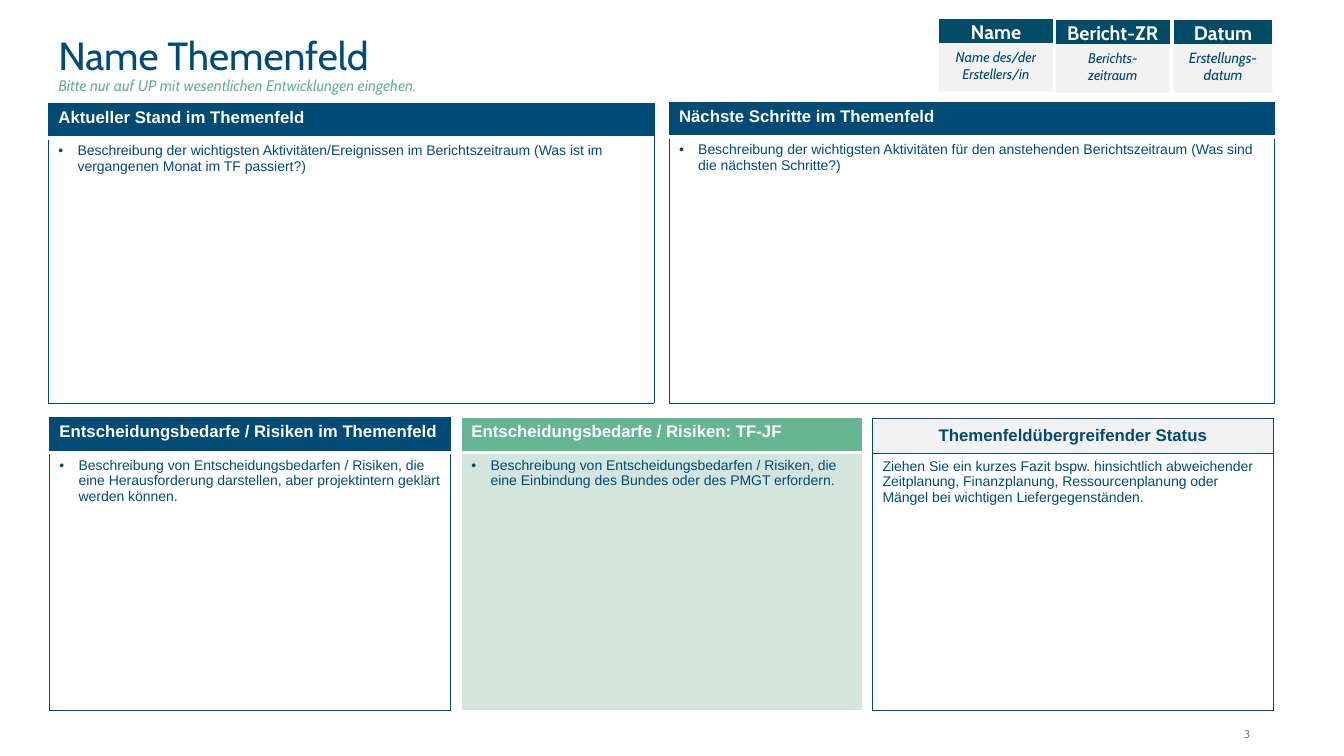
import pptx
import pptx.dml.color
import pptx.enum.shapes
import pptx.enum.text
import pptx.oxml
import pptx.oxml.ns
import pptx.util

PX = 9144
ALIGN = pptx.enum.text.PP_ALIGN
ANCHOR = pptx.enum.text.MSO_ANCHOR
SHAPE = pptx.enum.shapes.MSO_SHAPE
COLORS = {
    "navy": "004B76",
    "petrol": "004B65",
    "green": "66B692",
    "mint": "D3E5DC",
    "light": "F2F2F2",
    "white": "FFFFFF",
    "gray": "808080",
}
NAVY_LINE = ("navy", 0.25)
WHITE_LINE = ("white", 1)
WHITE_GAP = ("white", 3)


def px(*lengths):
    return [pptx.util.Emu(length * PX) for length in lengths]


def rgb(color):
    return pptx.dml.color.RGBColor.from_string(COLORS[color])


def set_margins(target, left, top, right, bottom):
    target.margin_left, target.margin_top, target.margin_right, target.margin_bottom = px(
        left, top, right, bottom)


def write(paragraph, text, size, color, font="Cabin", bold=False, italic=False, align=ALIGN.LEFT):
    paragraph.text = text
    paragraph.alignment = align
    paragraph.font.name = font
    paragraph.font.size = pptx.util.Pt(size)
    paragraph.font.bold = bold
    paragraph.font.italic = italic
    paragraph.font.color.rgb = rgb(color)


def add_bullet(paragraph):
    properties = paragraph._p.get_or_add_pPr()
    properties.set("marL", str(19 * PX))
    properties.set("indent", str(-19 * PX))
    namespace = pptx.oxml.ns.nsdecls("a")
    properties.append(pptx.oxml.parse_xml(f'<a:buFont {namespace} typeface="Arial"/>'))
    properties.append(pptx.oxml.parse_xml(f'<a:buChar {namespace} char="•"/>'))


def add_text_box(slide, box, anchor=ANCHOR.TOP):
    frame = slide.shapes.add_textbox(*px(*box)).text_frame
    frame.word_wrap = True
    frame.vertical_anchor = anchor
    return frame


def add_title(slide):
    frame = add_text_box(slide, (48, 31, 818, 71))
    set_margins(frame, 10, 5, 10, 5)
    write(frame.paragraphs[0], "Name Themenfeld", 28, "navy")
    write(frame.add_paragraph(), "Bitte nur auf UP mit wesentlichen Entwicklungen eingehen.",
          11, "green", italic=True)
    for paragraph in frame.paragraphs:
        paragraph.line_spacing = 0.9


def add_page_number(slide, number):
    frame = add_text_box(slide, (1194, 713, 47, 22), ANCHOR.BOTTOM)
    set_margins(frame, 0, 0, 0, 0)
    write(frame.paragraphs[0], number, 8, "gray", align=ALIGN.RIGHT)


def add_label(slide, kind, box, fill, margins, text, size, color, **style):
    shape = slide.shapes.add_shape(kind, *px(*box))
    shape.shadow.inherit = False
    shape.fill.solid()
    shape.fill.fore_color.rgb = rgb(fill)
    shape.line.fill.background()
    frame = shape.text_frame
    frame.word_wrap = True
    frame.vertical_anchor = ANCHOR.MIDDLE
    set_margins(frame, *margins)
    write(frame.paragraphs[0], text, size, color, align=ALIGN.CENTER, **style)


def add_info_card(slide, left, top, width, heading, hint, hint_size):
    add_label(slide, SHAPE.RECTANGLE, (left, top, width, 72), "light", (10, 24, 10, 5),
              hint, hint_size, "navy", italic=True)
    add_label(slide, SHAPE.FLOWCHART_PROCESS, (left, top, width, 24), "petrol", (0, 0, 0, 0),
              heading, 14, "white", bold=True)


def format_cell(cell, fill, borders):
    properties = cell._tc.get_or_add_tcPr()
    for side, (color, width) in zip("LRTB", borders):
        properties.append(pptx.oxml.parse_xml(
            f'<a:ln{side} {pptx.oxml.ns.nsdecls("a")} w="{int(width * 12700)}">'
            f'<a:solidFill><a:srgbClr val="{COLORS[color]}"/></a:solidFill></a:ln{side}>'))
    if fill:
        cell.fill.solid()
        cell.fill.fore_color.rgb = rgb(fill)
    else:
        cell.fill.background()
    set_margins(cell, 10, 5, 10, 5)


def add_panel(slide, box, heading, body, head_fill="navy", body_fill=None,
              edge=NAVY_LINE, gap=(WHITE_GAP, WHITE_LINE), status=False):
    table = slide.shapes.add_table(2, 1, *px(*box)).table
    table.first_row = table.horz_banding = False
    table.rows[0].height, table.rows[1].height = px(35, box[3] - 35)
    head_cell, body_cell = table.cell(0, 0), table.cell(1, 0)
    format_cell(head_cell, head_fill, (edge, edge, edge, gap[0]))
    format_cell(body_cell, body_fill, (edge, edge, gap[1], edge))
    head_cell.vertical_anchor = ANCHOR.MIDDLE if status else ANCHOR.TOP
    write(head_cell.text_frame.paragraphs[0], heading, 12, "navy" if status else "white",
          font="Arial", bold=True, align=ALIGN.CENTER if status else ALIGN.LEFT)
    paragraph = body_cell.text_frame.paragraphs[0]
    if not status:
        add_bullet(paragraph)
    write(paragraph, body, 10, "navy", font="Arial")


def main():
    presentation = pptx.Presentation()
    presentation.slide_width, presentation.slide_height = px(1334, 750)
    slide = presentation.slides.add_slide(presentation.slide_layouts[6])

    add_page_number(slide, "3")
    add_title(slide)

    add_panel(slide, (48, 102, 601, 298), "Aktueller Stand im Themenfeld",
              "Beschreibung der wichtigsten Aktivitäten/Ereignissen im Berichtszeitraum "
              "(Was ist im vergangenen Monat im TF passiert?)")
    add_panel(slide, (664, 101, 601, 299), "Nächste Schritte im Themenfeld",
              "Beschreibung der wichtigsten Aktivitäten für den anstehenden Berichtszeitraum "
              "(Was sind die nächsten Schritte?)")
    add_panel(slide, (49, 414, 398, 291), "Entscheidungsbedarfe / Risiken im Themenfeld",
              "Beschreibung von Entscheidungsbedarfen / Risiken, die eine Herausforderung "
              "darstellen, aber projektintern geklärt werden können.")
    add_panel(slide, (458, 414, 398, 291), "Entscheidungsbedarfe / Risiken: TF-JF",
              "Beschreibung von Entscheidungsbedarfen / Risiken, die eine Einbindung "
              "des Bundes oder des PMGT erfordern.",
              head_fill="green", body_fill="mint", edge=WHITE_LINE)
    add_panel(slide, (866, 415, 398, 290), "Themenfeldübergreifender Status",
              "Ziehen Sie ein kurzes Fazit bspw. hinsichtlich abweichender Zeitplanung, "
              "Finanzplanung, Ressourcenplanung oder Mängel bei wichtigen Liefergegenständen.",
              head_fill="light", body_fill="white", gap=(NAVY_LINE, NAVY_LINE), status=True)

    add_info_card(slide, 1165, 20, 98, "Datum", "Erstellungs-datum", 10.5)
    add_info_card(slide, 1048, 20, 113, "Bericht-ZR", "Berichts-zeitraum", 10)
    add_info_card(slide, 932, 19, 113, "Name", "Name des/der Erstellers/in", 10)

    presentation.save("out.pptx")


if __name__ == "__main__":
    main()
